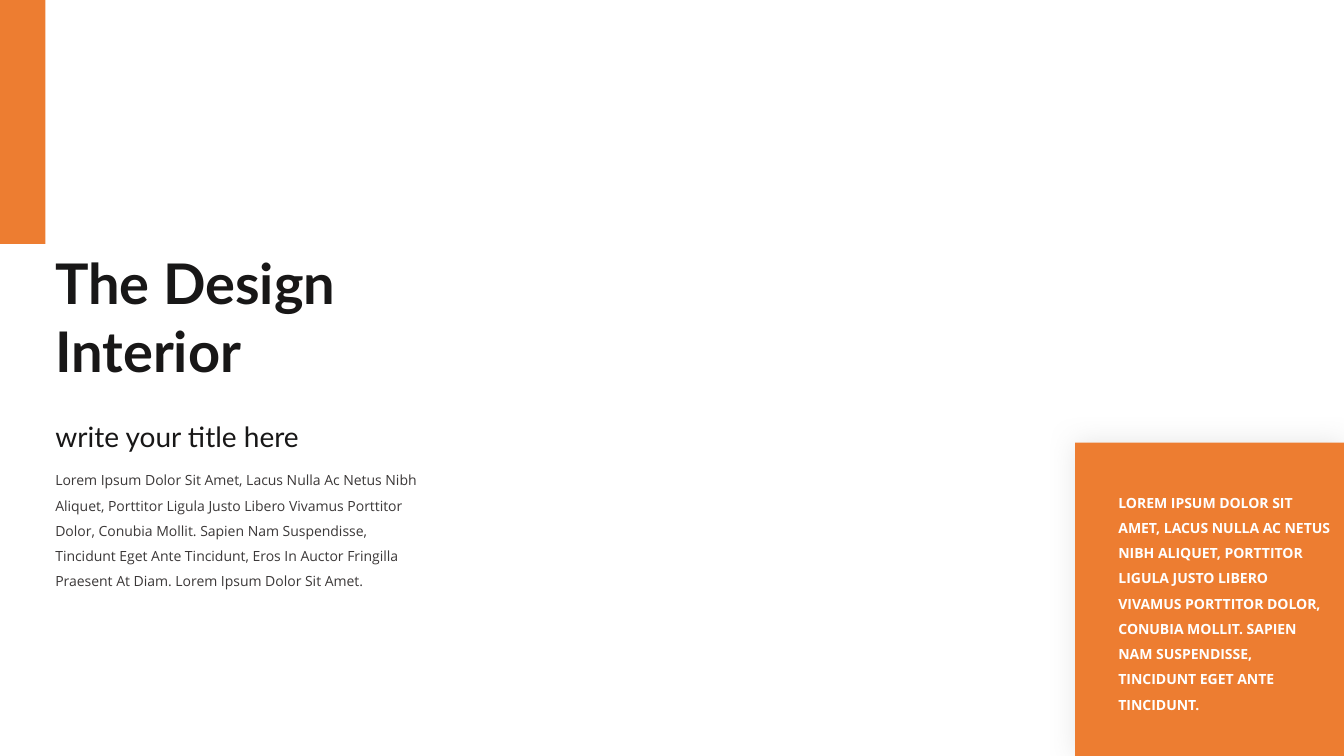
import lxml.etree
import pptx
import pptx.dml.color
import pptx.enum.shapes
import pptx.enum.text
import pptx.oxml.ns
import pptx.util
from dataclasses import dataclass


@dataclass(frozen=True)
class Theme:
    accent: str = "ED7D31"
    ink: str = "181717"
    body: str = "3B3838"
    light: str = "FFFFFF"
    shadow: str = "BFBFBF"
    heading_font: str = "Lato"
    body_font: str = "Open Sans"
    title_size: int = 40
    subtitle_size: int = 20
    body_size: int = 10


THEME = Theme()
WIDTH, HEIGHT = 13.33, 7.5

TITLE = "The Design Interior"
SUBTITLE = "write your title here"
DESCRIPTION = (
    "Lorem Ipsum Dolor Sit Amet, Lacus Nulla Ac Netus Nibh Aliquet, Porttitor Ligula Justo "
    "Libero Vivamus Porttitor Dolor, Conubia Mollit. Sapien Nam Suspendisse, Tincidunt Eget "
    "Ante Tincidunt, Eros In Auctor Fringilla Praesent At Diam. Lorem Ipsum Dolor Sit Amet."
)
CALLOUT = (
    "LOREM IPSUM DOLOR SIT AMET, LACUS NULLA AC NETUS NIBH ALIQUET, PORTTITOR LIGULA JUSTO "
    "LIBERO VIVAMUS PORTTITOR DOLOR, CONUBIA MOLLIT. SAPIEN NAM SUSPENDISSE, TINCIDUNT EGET "
    "ANTE TINCIDUNT."
)

# The bar's lower right corner anchors the text column.
BAR_WIDTH, BAR_HEIGHT = 0.45, 2.42
SUBTITLE_TOP, SUBTITLE_HEIGHT = 4.11, 0.44
PANEL_LEFT, PANEL_TOP = 0.8 * WIDTH, 4.39
CALLOUT_INDENT, CALLOUT_DROP = 0.33, 0.38

BLOCKS = [
    # text, (left, top, width, height), font, size, colour, bold, line spacing
    (CALLOUT, (PANEL_LEFT + CALLOUT_INDENT, PANEL_TOP + CALLOUT_DROP, 2.31, 2.37),
     THEME.body_font, THEME.body_size, THEME.light, True, 1.5),
    (DESCRIPTION, (BAR_WIDTH, SUBTITLE_TOP + SUBTITLE_HEIGHT, 3.81, 1.36),
     THEME.body_font, THEME.body_size, THEME.body, False, 1.5),
    (SUBTITLE, (BAR_WIDTH, SUBTITLE_TOP, 2.82, SUBTITLE_HEIGHT),
     THEME.heading_font, THEME.subtitle_size, THEME.ink, False, None),
    (TITLE, (BAR_WIDTH, BAR_HEIGHT, 3.26, 1.45),
     THEME.heading_font, THEME.title_size, THEME.ink, True, None),
]


def color(value):
    return pptx.dml.color.RGBColor.from_string(value)


def inches(box):
    return [pptx.util.Inches(length) for length in box]


def add_rectangle(slide, box):
    shape = slide.shapes.add_shape(pptx.enum.shapes.MSO_SHAPE.RECTANGLE, *inches(box))
    shape.shadow.inherit = False
    shape.fill.solid()
    shape.fill.fore_color.rgb = color(THEME.accent)
    shape.line.fill.background()
    return shape


def add_glow_shadow(shape):
    """Give the shape a soft, centred outer shadow."""
    qn = pptx.oxml.ns.qn
    effects = shape.element.spPr.find(qn("a:effectLst"))
    shadow = lxml.etree.SubElement(
        effects, qn("a:outerShdw"), blurRad=str(pptx.util.Pt(20)), dist="0", dir="0",
        algn="ctr", rotWithShape="0")
    tint = lxml.etree.SubElement(shadow, qn("a:srgbClr"), val=THEME.shadow)
    lxml.etree.SubElement(tint, qn("a:alpha"), val="40000")


def add_text(slide, text, box, font, size, ink, bold, spacing):
    frame = slide.shapes.add_textbox(*inches(box)).text_frame
    frame.word_wrap = True
    frame.auto_size = pptx.enum.text.MSO_AUTO_SIZE.SHAPE_TO_FIT_TEXT
    paragraph = frame.paragraphs[0]
    paragraph.line_spacing = spacing
    run = paragraph.add_run()
    run.text = text
    run.font.name = font
    run.font.size = pptx.util.Pt(size)
    run.font.bold = bold
    run.font.color.rgb = color(ink)


def main():
    presentation = pptx.Presentation()
    presentation.slide_width, presentation.slide_height = inches((WIDTH, HEIGHT))
    slide = presentation.slides.add_slide(presentation.slide_layouts[6])
    panel = add_rectangle(
        slide, (PANEL_LEFT, PANEL_TOP, WIDTH - PANEL_LEFT, HEIGHT - PANEL_TOP))
    add_glow_shadow(panel)
    for block in BLOCKS:
        add_text(slide, *block)
    add_rectangle(slide, (0, 0, BAR_WIDTH, BAR_HEIGHT))
    presentation.save("out.pptx")


if __name__ == "__main__":
    main()
